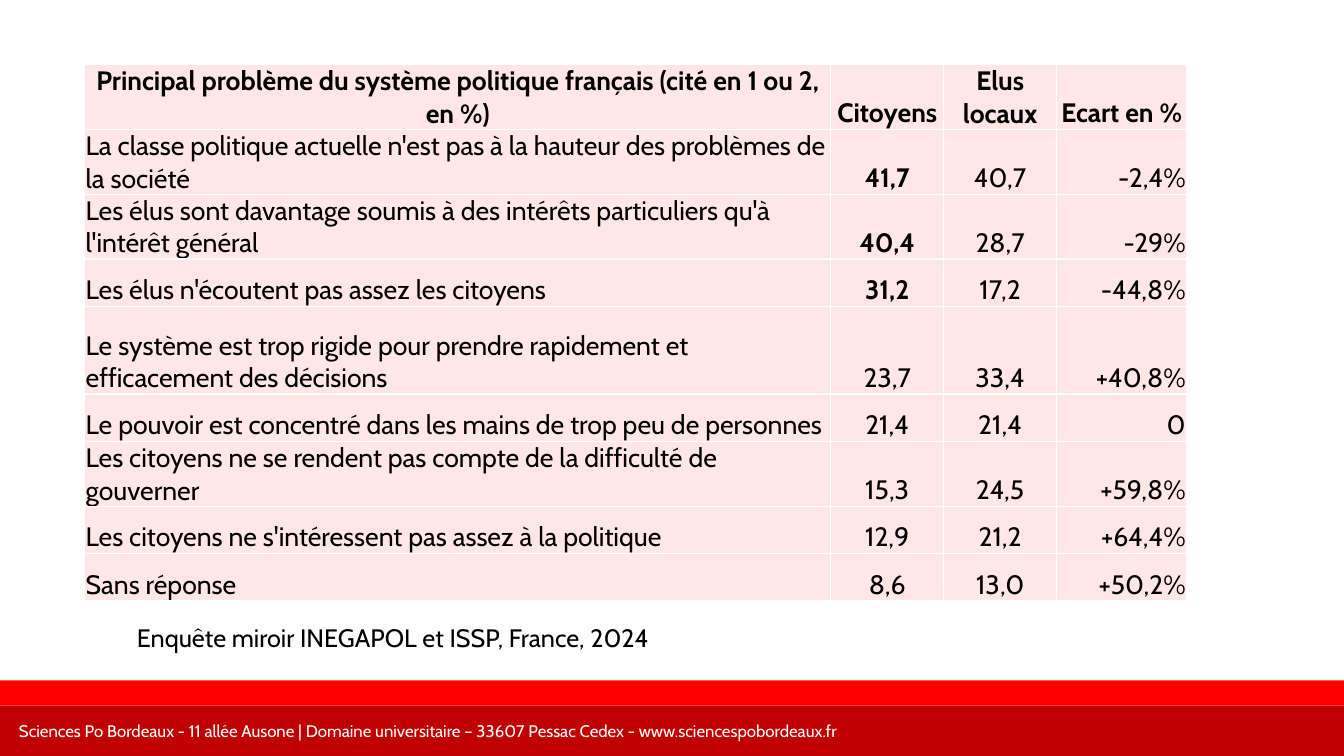
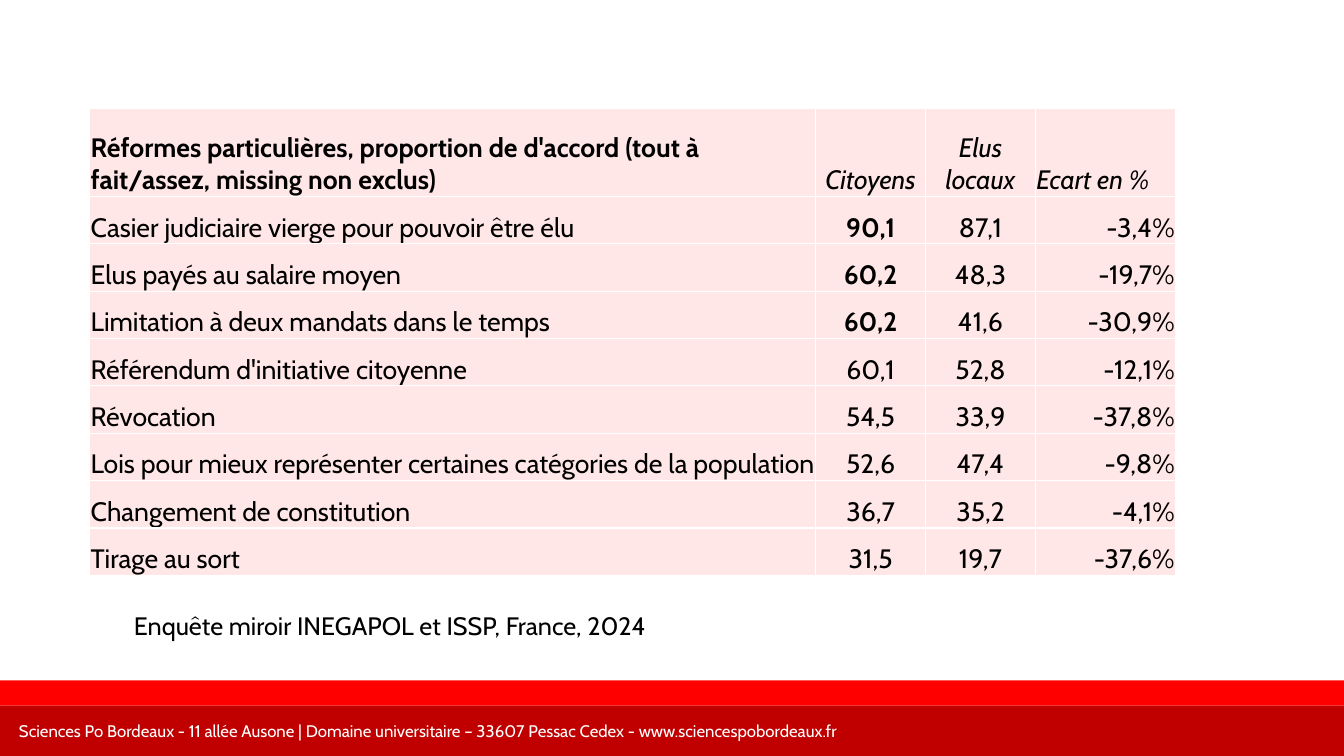
import dataclasses

import lxml.etree
import pptx
import pptx.dml.color
import pptx.enum.shapes
import pptx.enum.text
import pptx.oxml.ns
import pptx.util

Inches = pptx.util.Inches
Align = pptx.enum.text.PP_ALIGN
Anchor = pptx.enum.text.MSO_ANCHOR


@dataclasses.dataclass(frozen=True)
class Theme:
    font: str = "Cabin"
    text: str = "000000"
    white: str = "FFFFFF"
    red: str = "FF0000"
    dark_red: str = "C00000"
    cell: str = "FFE7E7"
    footer_size: int = 12
    source_size: int = 18
    table_size: int = 19
    border_width: float = 1


@dataclasses.dataclass(frozen=True)
class Heading:
    text: str
    align: int = Align.CENTER
    bold: bool = False
    italic: bool = False


FOOTER = ("Sciences Po Bordeaux - 11 allée Ausone | Domaine universitaire – "
          "33607 Pessac Cedex - www.sciencespobordeaux.fr")
SOURCE = "Enquête miroir INEGAPOL et ISSP, France, 2024"
COLUMN_ALIGNS = (Align.LEFT, Align.CENTER, Align.CENTER, Align.RIGHT)
ROW_HEIGHT, TALL_ROW_HEIGHT = 0.47, 0.87
BOLD_SCORES = 3

PROBLEM_HEADINGS = [
    Heading(text, bold=True) for text in (
        "Principal problème du système politique français (cité en 1 ou 2, en %)",
        "Citoyens", "Elus locaux", "Ecart en %")
]
PROBLEMS = [
    ("La classe politique actuelle n'est pas à la hauteur des problèmes de la société",
     "41,7", "40,7", "-2,4%"),
    ("Les élus sont davantage soumis à des intérêts particuliers qu'à l'intérêt général",
     "40,4", "28,7", "-29%"),
    ("Les élus n'écoutent pas assez les citoyens", "31,2", "17,2", "-44,8%"),
    ("Le système est trop rigide pour prendre rapidement et efficacement des décisions",
     "23,7", "33,4", "+40,8%"),
    ("Le pouvoir est concentré dans les mains de trop peu de personnes",
     "21,4", "21,4", "0"),
    ("Les citoyens ne se rendent pas compte de la difficulté de gouverner",
     "15,3", "24,5", "+59,8%"),
    ("Les citoyens ne s'intéressent pas assez à la politique", "12,9", "21,2", "+64,4%"),
    ("Sans réponse", "8,6", "13,0", "+50,2%"),
]

REFORM_HEADINGS = [
    Heading("Réformes particulières, proportion de d'accord "
            "(tout à fait/assez, missing non exclus)", Align.LEFT, bold=True),
    Heading("Citoyens", italic=True),
    Heading("Elus locaux", italic=True),
    Heading("Ecart en %", Align.LEFT, italic=True),
]
REFORMS = [
    ("Casier judiciaire vierge pour pouvoir être élu", "90,1", "87,1", "-3,4%"),
    ("Elus payés au salaire moyen", "60,2", "48,3", "-19,7%"),
    ("Limitation à deux mandats dans le temps", "60,2", "41,6", "-30,9%"),
    ("Référendum d'initiative citoyenne", "60,1", "52,8", "-12,1%"),
    ("Révocation", "54,5", "33,9", "-37,8%"),
    ("Lois pour mieux représenter certaines catégories de la population",
     "52,6", "47,4", "-9,8%"),
    ("Changement de constitution", "36,7", "35,2", "-4,1%"),
    ("Tirage au sort", "31,5", "19,7", "-37,6%"),
]


def rgb(color):
    return pptx.dml.color.RGBColor.from_string(color)


class SlideBuilder:
    def __init__(self, deck, theme):
        self.deck = deck
        self.theme = theme
        self.page = None

    def new_page(self):
        """Start a blank slide with the shared bands and address."""
        self.page = self.deck.slides.add_slide(self.deck.slide_layouts[6])
        self.band(7, 0.5, self.theme.dark_red)
        self.text(FOOTER, 0.09, 7.1, 8.56, 0.3, self.theme.footer_size, self.theme.white)
        self.band(6.75, 0.25, self.theme.red)

    def band(self, top, height, color):
        shape = self.page.shapes.add_shape(
            pptx.enum.shapes.MSO_SHAPE.RECTANGLE,
            0, Inches(top), self.deck.slide_width, Inches(height))
        shape.shadow.inherit = False
        shape.fill.solid()
        shape.fill.fore_color.rgb = rgb(color)
        shape.line.fill.background()

    def span(self, para, text, size, color, bold=False, italic=False):
        span = para.add_run()
        span.text = text
        span.font.name = self.theme.font
        span.font.size = pptx.util.Pt(size)
        span.font.color.rgb = rgb(color)
        span.font.bold = bold
        span.font.italic = italic

    def text(self, text, left, top, width, height, size, color):
        box = self.page.shapes.add_textbox(
            Inches(left), Inches(top), Inches(width), Inches(height))
        box.text_frame.word_wrap = True
        box.text_frame.auto_size = pptx.enum.text.MSO_AUTO_SIZE.SHAPE_TO_FIT_TEXT
        self.span(box.text_frame.paragraphs[0], text, size, color)

    def source(self, left, top):
        self.text(SOURCE, left, top, 10.71, 0.4, self.theme.source_size, self.theme.text)

    def borders(self, cell):
        properties = cell._tc.get_or_add_tcPr()
        qn = pptx.oxml.ns.qn
        for side in ("a:lnL", "a:lnR", "a:lnT", "a:lnB"):
            line = lxml.etree.SubElement(
                properties, qn(side), w=str(pptx.util.Pt(self.theme.border_width)))
            fill = lxml.etree.SubElement(line, qn("a:solidFill"))
            lxml.etree.SubElement(fill, qn("a:srgbClr"), val=self.theme.white)

    def cell(self, cell, text, align, bold=False, italic=False):
        self.borders(cell)
        cell.fill.solid()
        cell.fill.fore_color.rgb = rgb(self.theme.cell)
        cell.vertical_anchor = Anchor.BOTTOM
        cell.margin_left = cell.margin_right = cell.margin_top = Inches(0.01)
        cell.margin_bottom = 0
        para = cell.text_frame.paragraphs[0]
        para.alignment = align
        self.span(para, text, self.theme.table_size, self.theme.text, bold, italic)

    def table(self, left, top, widths, headings, rows, tall_row):
        """Draw headings and rows; the first scores of citizens are bold."""
        heights = [ROW_HEIGHT] * (len(rows) + 1)
        heights[tall_row] = TALL_ROW_HEIGHT
        table = self.page.shapes.add_table(
            len(heights), len(widths), Inches(left), Inches(top),
            Inches(sum(widths)), Inches(sum(heights))).table
        table.first_row = table.horz_banding = False
        for column, width in zip(table.columns, widths):
            column.width = Inches(width)
        for row, height in zip(table.rows, heights):
            row.height = Inches(height)
        for column, heading in enumerate(headings):
            self.cell(table.cell(0, column), heading.text, heading.align,
                      heading.bold, heading.italic)
        for row, values in enumerate(rows, 1):
            for column, (value, align) in enumerate(zip(values, COLUMN_ALIGNS)):
                self.cell(table.cell(row, column), value, align,
                          bold=column == 1 and row <= BOLD_SCORES)


def main():
    deck = pptx.Presentation()
    deck.slide_width, deck.slide_height = Inches(13.33), Inches(7.5)
    builder = SlideBuilder(deck, Theme())

    builder.new_page()
    builder.table(0.84, 0.64, (7.4, 1.12, 1.12, 1.29), PROBLEM_HEADINGS, PROBLEMS, tall_row=4)
    builder.source(1.26, 6.12)

    builder.new_page()
    builder.source(1.23, 6.01)
    builder.table(0.89, 1.08, (7.2, 1.09, 1.09, 1.39), REFORM_HEADINGS, REFORMS, tall_row=0)

    deck.save("out.pptx")


if __name__ == "__main__":
    main()
